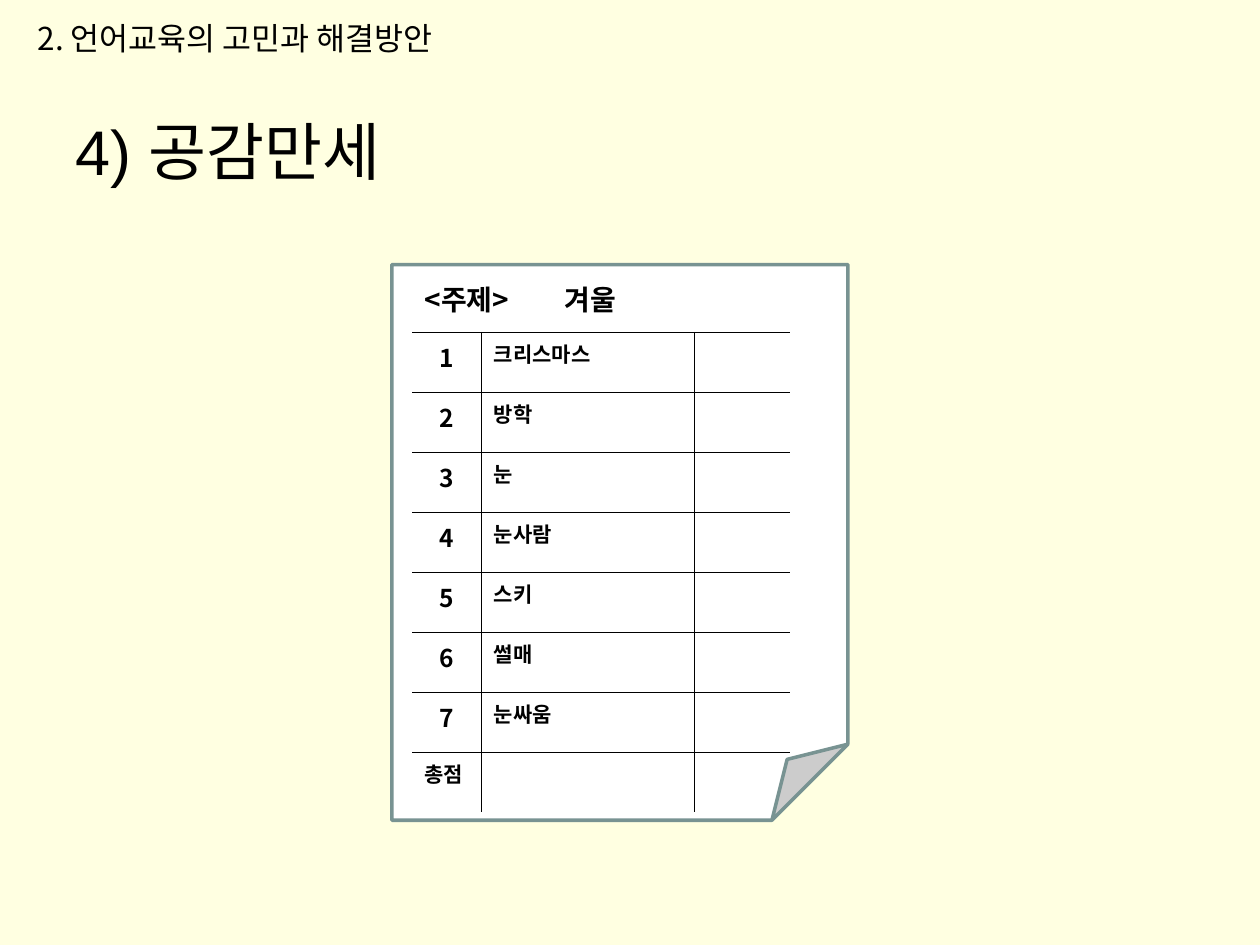
"""Build the slide with the topic score sheet for the empathy word game."""
from dataclasses import dataclass

from lxml import etree
from pptx import Presentation
from pptx.dml.color import RGBColor
from pptx.enum.shapes import MSO_SHAPE
from pptx.enum.text import PP_ALIGN
from pptx.oxml.ns import qn
from pptx.util import Inches, Pt

FOLDED_CORNER = MSO_SHAPE.FOLDED_CORNER
CENTER = PP_ALIGN.CENTER
LEFT = PP_ALIGN.LEFT


@dataclass(frozen=True)
class Theme:
    """Colours, fonts and type sizes of the slide."""
    background: RGBColor = RGBColor(0xFF, 0xFF, 0xE1)
    ink: RGBColor = RGBColor(0, 0, 0)
    paper: RGBColor = RGBColor(0xFF, 0xFF, 0xFF)
    paper_edge: RGBColor = RGBColor(0x78, 0x93, 0x92)
    heading_font: str = "Arial"
    font: str = "Noto Sans CJK KR"
    heading: int = 36
    section: int = 18
    topic: int = 16
    number: int = 14
    word: int = 12
    edge_width: float = 2
    rule_width: float = 0.5


THEME = Theme()
WORDS = ["크리스마스", "방학", "눈", "눈사람", "스키", "썰매", "눈싸움"]
COLUMN_WIDTHS = [0.55, 1.69, 0.76]
TABLE_HEIGHT = 4.29


def add_run(paragraph, text, size, font=THEME.font, bold=False):
    """Add one run with its Latin and East Asian fonts."""
    run = paragraph.add_run()
    run.text = text
    run.font.size = Pt(size)
    run.font.bold = bold
    run.font.name = font
    run.font.color.rgb = THEME.ink
    east_asian = etree.Element(qn("a:ea"), typeface=THEME.font)
    run.font._element.find(qn("a:latin")).addnext(east_asian)


def add_text(slide, text, left, top, width, height, size, font):
    """Add a wrapped text box with one run."""
    box = slide.shapes.add_textbox(
        Inches(left), Inches(top), Inches(width), Inches(height))
    box.text_frame.word_wrap = True
    add_run(box.text_frame.paragraphs[0], text, size, font)


def add_paper(slide):
    """Add the sheet of paper with a folded corner."""
    paper = slide.shapes.add_shape(
        FOLDED_CORNER, Inches(3.11), Inches(2.1), Inches(3.62), Inches(4.41))
    paper.shadow.inherit = False
    paper.fill.solid()
    paper.fill.fore_color.rgb = THEME.paper
    paper.line.color.rgb = THEME.paper_edge
    paper.line.width = Pt(THEME.edge_width)


def set_borders(cell, ruled_sides):
    """Rule the named sides of a cell and clear the others."""
    properties = cell._tc.get_or_add_tcPr()
    for side in "LRTB":
        line = etree.SubElement(
            properties, qn(f"a:ln{side}"), w=str(Pt(THEME.rule_width)))
        if side in ruled_sides:
            fill = etree.SubElement(line, qn("a:solidFill"))
            etree.SubElement(fill, qn("a:srgbClr"), val=str(THEME.ink))
        else:
            etree.SubElement(line, qn("a:noFill"))


def fill_cell(cell, text, size, alignment=LEFT):
    """Write bold text into a table cell."""
    paragraph = cell.text_frame.paragraphs[0]
    paragraph.alignment = alignment
    add_run(paragraph, text, size, bold=True)


def add_tab_stop(paragraph, position):
    """Set a left tab stop on a paragraph."""
    tabs = etree.SubElement(paragraph._p.get_or_add_pPr(), qn("a:tabLst"))
    etree.SubElement(tabs, qn("a:tab"), pos=str(Inches(position)), algn="l")


def add_score_table(slide):
    """Add the score table with only its inner rules drawn."""
    row_count = len(WORDS) + 2
    column_count = len(COLUMN_WIDTHS)
    table = slide.shapes.add_table(
        row_count, column_count, Inches(3.27), Inches(2.16),
        Inches(sum(COLUMN_WIDTHS)), Inches(TABLE_HEIGHT)).table
    table.first_row = False
    table.horz_banding = False
    for column, width in zip(table.columns, COLUMN_WIDTHS):
        column.width = Inches(width)

    for row in range(row_count):
        for column in range(column_count):
            inner = {
                "L": row > 0 and column > 0,
                "R": row > 0 and column < column_count - 1,
                "T": row > 0,
                "B": row < row_count - 1,
            }
            cell = table.cell(row, column)
            set_borders(cell, [side for side in inner if inner[side]])
            cell.fill.background()

    topic = table.cell(0, 0)
    topic.merge(table.cell(0, column_count - 1))
    fill_cell(topic, "<주제>\t겨울", THEME.topic)
    add_tab_stop(topic.text_frame.paragraphs[0], 1.11)
    for number, word in enumerate(WORDS, start=1):
        fill_cell(table.cell(number, 0), str(number), THEME.number, CENTER)
        fill_cell(table.cell(number, 1), word, THEME.word)
    fill_cell(table.cell(row_count - 1, 0), "총점", THEME.word)


def main():
    """Build and save the presentation."""
    presentation = Presentation()
    presentation.slide_width = Inches(10)
    presentation.slide_height = Inches(7.5)
    slide = presentation.slides.add_slide(presentation.slide_layouts[6])
    slide.background.fill.solid()
    slide.background.fill.fore_color.rgb = THEME.background

    add_text(slide, "4) 공감만세", 0.5, 0.84, 9, 5.86,
             THEME.heading, THEME.heading_font)
    add_text(slide, "2. 언어교육의 고민과 해결방안", 0.2, 0.1, 3.7, 0.71,
             THEME.section, THEME.font)
    add_paper(slide)
    add_score_table(slide)
    presentation.save("out.pptx")


if __name__ == "__main__":
    main()
